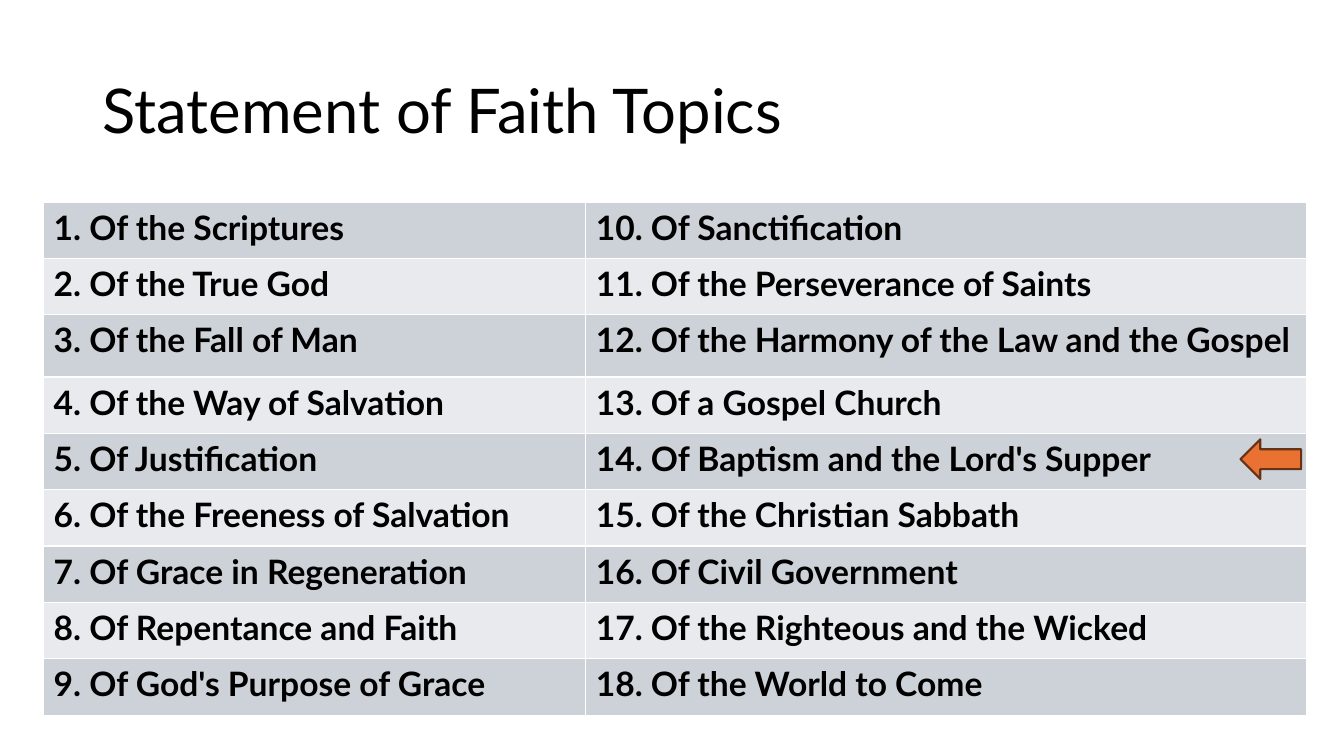
from dataclasses import dataclass

from lxml import etree
from pptx import Presentation
from pptx.dml.color import RGBColor
from pptx.enum.shapes import MSO_SHAPE
from pptx.enum.text import MSO_ANCHOR
from pptx.oxml.ns import qn
from pptx.util import Cm, Pt

RIGHT_ARROW = MSO_SHAPE.RIGHT_ARROW
TOP, MIDDLE = MSO_ANCHOR.TOP, MSO_ANCHOR.MIDDLE


@dataclass(frozen=True)
class Theme:
    font: str = "Lato"
    text: str = "000000"
    bands: tuple = ("CCD2D8", "E8EAED")
    border: str = "FFFFFF"
    arrow: str = "E97132"
    arrow_line: str = "663216"
    title_size: int = 44
    topic_size: int = 24


theme = Theme()


def write_text(frame, text, size, bold=False, anchor=TOP, line_spacing=1.0):
    frame.word_wrap = True
    frame.vertical_anchor = anchor
    paragraph = frame.paragraphs[0]
    paragraph.line_spacing = line_spacing
    run = paragraph.add_run()
    run.text = text
    run.font.name = theme.font
    run.font.size = Pt(size)
    run.font.bold = bold
    run.font.color.rgb = RGBColor.from_string(theme.text)


def add_borders(cell, color, width):
    properties = cell._tc.get_or_add_tcPr()
    for position, side in enumerate(("lnL", "lnR", "lnT", "lnB")):
        line = etree.Element(qn(f"a:{side}"), w=str(Pt(width)))
        fill = etree.SubElement(line, qn("a:solidFill"))
        etree.SubElement(fill, qn("a:srgbClr"), val=color)
        properties.insert(position, line)


topics = [
    "Of the Scriptures",
    "Of the True God",
    "Of the Fall of Man",
    "Of the Way of Salvation",
    "Of Justification",
    "Of the Freeness of Salvation",
    "Of Grace in Regeneration",
    "Of Repentance and Faith",
    "Of God's Purpose of Grace",
    "Of Sanctification",
    "Of the Perseverance of Saints",
    "Of the Harmony of the Law and the Gospel",
    "Of a Gospel Church",
    "Of Baptism and the Lord's Supper",
    "Of the Christian Sabbath",
    "Of Civil Government",
    "Of the Righteous and the Wicked",
    "Of the World to Come",
]
column_widths = (13.66, 18.16)
row_count = len(topics) // len(column_widths)
row_height, tall_row, tall_height = 1.42, 2, 1.57

presentation = Presentation()
presentation.slide_width = Cm(33.87)
presentation.slide_height = Cm(19.05)
slide = presentation.slides.add_slide(presentation.slide_layouts[6])

# Title
title = slide.shapes.add_textbox(Cm(2.33), Cm(1.01), Cm(29.21), Cm(3.68))
write_text(title.text_frame, "Statement of Faith Topics", theme.title_size,
           anchor=MIDDLE, line_spacing=0.9)

# Topics, numbered down each column
table = slide.shapes.add_table(
    row_count, len(column_widths), Cm(1.1), Cm(5.09),
    Cm(sum(column_widths)), Cm(row_height * row_count)).table
table.first_row = False
table.horz_banding = False
for column, width in zip(table.columns, column_widths):
    column.width = Cm(width)
for row in table.rows:
    row.height = Cm(row_height)
table.rows[tall_row].height = Cm(tall_height)

for index, topic in enumerate(topics):
    column_index, row_index = divmod(index, row_count)
    cell = table.cell(row_index, column_index)
    cell.fill.solid()
    cell.fill.fore_color.rgb = RGBColor.from_string(theme.bands[row_index % 2])
    add_borders(cell, theme.border, 1)
    write_text(cell.text_frame, f"{index + 1}. {topic}", theme.topic_size, bold=True)

# Arrow pointing left at the current topic
arrow = slide.shapes.add_shape(RIGHT_ARROW, Cm(31.26), Cm(11.07), Cm(1.53), Cm(1))
arrow.rotation = 180
arrow.shadow.inherit = False
arrow.fill.solid()
arrow.fill.fore_color.rgb = RGBColor.from_string(theme.arrow)
arrow.line.color.rgb = RGBColor.from_string(theme.arrow_line)
arrow.line.width = Pt(1.5)

presentation.save("out.pptx")
